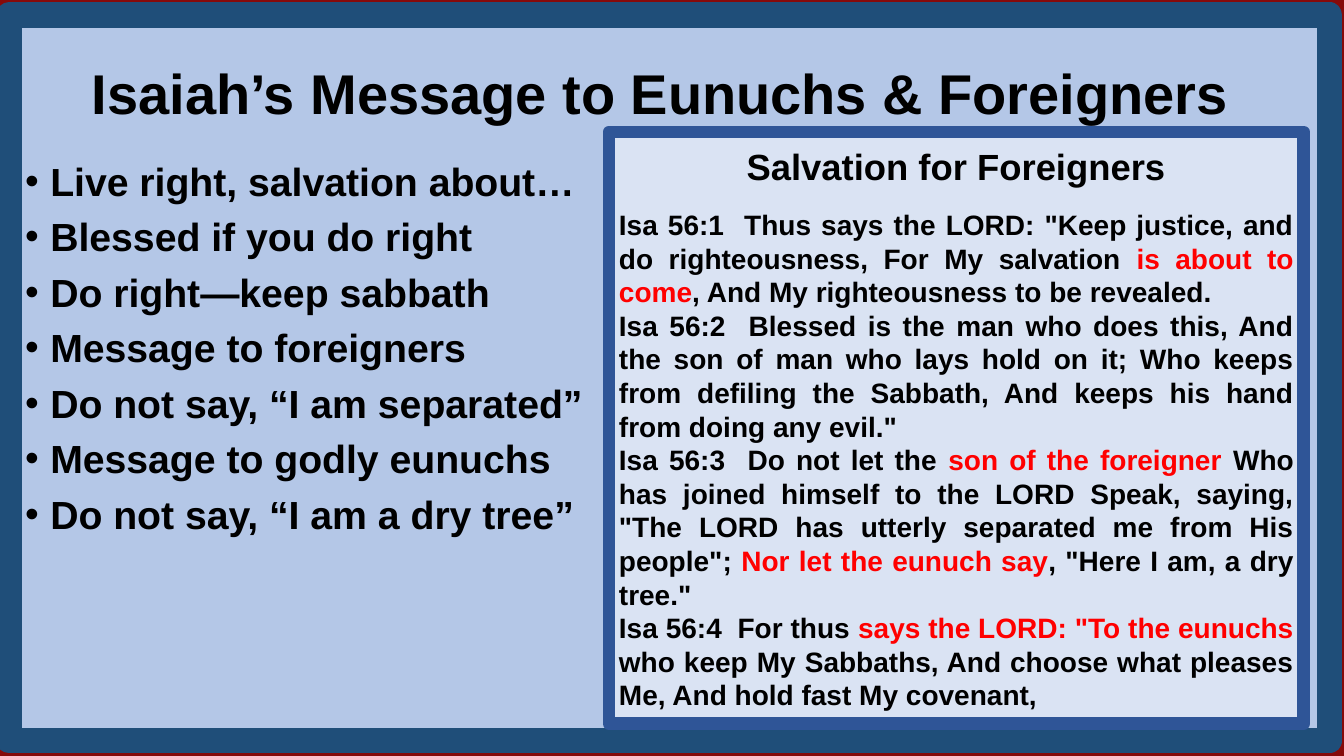
from dataclasses import dataclass

from lxml.etree import SubElement
from pptx import Presentation
from pptx.dml.color import RGBColor
from pptx.enum.shapes import MSO_SHAPE as Preset
from pptx.enum.text import MSO_ANCHOR as Anchor, PP_ALIGN as Align
from pptx.oxml.ns import qn
from pptx.util import Emu, Pt

PX = 9144  # EMU per px, 100 px to the inch


@dataclass(frozen=True)
class Theme:
    font: str = "Arial"
    backdrop: str = "860A0A"
    frame_fill: str = "B4C7E7"
    frame_line: str = "1F4E79"
    panel_fill: str = "DAE3F3"
    panel_line: str = "2F5597"
    ink: str = "000000"
    accent: str = "FF0000"
    title: int = 40
    bullet: int = 28
    heading: int = 26
    verse: int = 20


@dataclass(frozen=True)
class Area:
    left: int
    top: int
    width: int
    height: int

    def emu(self) -> tuple:
        return tuple(Emu(v * PX) for v in (self.left, self.top, self.width, self.height))


@dataclass(frozen=True)
class Panel:
    area: Area
    fill: str
    line: str
    weight: int


THEME = Theme()
FRAME = Panel(Area(9, 15, 1310, 720), THEME.frame_fill, THEME.frame_line, 18)
SCRIPTURE = Panel(Area(604, 131, 689, 587), THEME.panel_fill, THEME.panel_line, 9)
TITLE_AREA = Area(17, 53, 1275, 77)
BULLET_AREA = Area(15, 151, 608, 557)

TITLE = "Isaiah’s Message to Eunuchs & Foreigners"
BULLETS = (
    "Live right, salvation about…",
    "Blessed if you do right",
    "Do right—keep sabbath",
    "Message to foreigners",
    "Do not say, “I am separated”",
    "Message to godly eunuchs",
    "Do not say, “I am a dry tree”",
)
HEADING = "Salvation for Foreigners"
# Text between bars is set in the accent colour
VERSES = (
    'Isa 56:1  Thus says the LORD: "Keep justice, and do righteousness, For My salvation '
    "|is about to come|, And My righteousness to be revealed.",
    "Isa 56:2  Blessed is the man who does this, And the son of man who lays hold on it; "
    'Who keeps from defiling the Sabbath, And keeps his hand from doing any evil."',
    "Isa 56:3  Do not let the |son of the foreigner |Who has joined himself to the LORD "
    'Speak, saying, "The LORD has utterly separated me from His people"; '
    '|Nor let the eunuch say|, "Here I am, a dry tree."',
    'Isa 56:4  For thus |says the LORD: "To the eunuchs| who keep My Sabbaths, '
    "And choose what pleases Me, And hold fast My covenant,",
)


def color(value: str) -> RGBColor:
    return RGBColor.from_string(value)


def write(para, text: str, size: int, align=Align.LEFT, after: float = 0) -> None:
    """Fill a paragraph, colouring every second bar-separated part."""
    para.alignment = align
    para.space_after = Pt(after)
    for index, part in enumerate(text.split("|")):
        span = para.add_run()
        span.text = part
        span.font.name = THEME.font
        span.font.size = Pt(size)
        span.font.bold = True
        span.font.color.rgb = color(THEME.accent if index % 2 else THEME.ink)


def add_bullet(para) -> None:
    props = para._p.get_or_add_pPr()
    indent = 25 * PX
    props.set("marL", str(indent))
    props.set("indent", str(-indent))
    SubElement(props, qn("a:buFont"), typeface=THEME.font)
    SubElement(props, qn("a:buChar"), char="•")


def add_panel(page, panel: Panel):
    box = page.shapes.add_shape(Preset.RECTANGLE, *panel.area.emu())
    box.shadow.inherit = False
    box.fill.solid()
    box.fill.fore_color.rgb = color(panel.fill)
    box.line.color.rgb = color(panel.line)
    box.line.width = Pt(panel.weight)
    SubElement(box.line._get_or_add_ln(), qn("a:round"))
    return box


def add_text(page, area: Area):
    frame = page.shapes.add_textbox(*area.emu()).text_frame
    frame.word_wrap = True
    return frame


def next_para(frame, first: bool):
    return frame.paragraphs[0] if first else frame.add_paragraph()


def main() -> None:
    deck = Presentation()
    deck.slide_width, deck.slide_height = Emu(1333 * PX), Emu(750 * PX)
    page = deck.slides.add_slide(deck.slide_layouts[6])
    page.background.fill.solid()
    page.background.fill.fore_color.rgb = color(THEME.backdrop)

    # Framed background
    add_panel(page, FRAME)

    # Scripture panel
    scripture = add_panel(page, SCRIPTURE).text_frame
    scripture.word_wrap = True
    scripture.vertical_anchor = Anchor.MIDDLE
    write(scripture.paragraphs[0], HEADING, THEME.heading, Align.CENTER, after=14)
    for verse in VERSES:
        write(scripture.add_paragraph(), verse, THEME.verse, Align.JUSTIFY)

    # Bullet list
    points = add_text(page, BULLET_AREA)
    for index, bullet in enumerate(BULLETS):
        para = next_para(points, index == 0)
        write(para, bullet, THEME.bullet, after=6)
        add_bullet(para)

    # Title
    title = add_text(page, TITLE_AREA)
    write(title.paragraphs[0], TITLE, THEME.title, Align.CENTER, after=5)

    deck.save("out.pptx")


if __name__ == "__main__":
    main()
